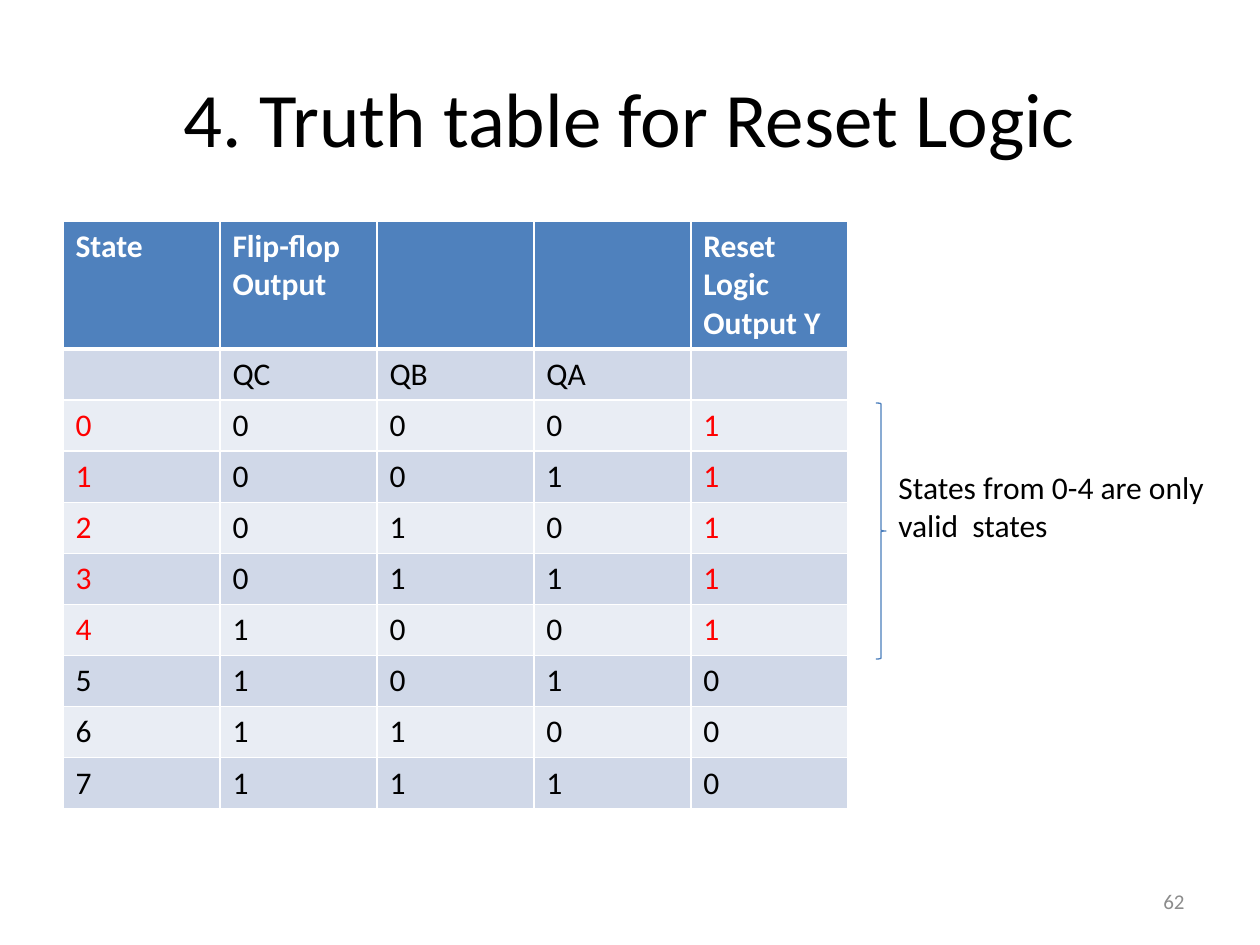
from dataclasses import dataclass

from lxml import etree
from pptx import Presentation
from pptx import util as u
from pptx.dml.color import RGBColor
from pptx.enum import shapes, text
from pptx.oxml import ns

SCALE = u.Inches(1) / 126  # EMU in one px


@dataclass(frozen=True)
class Theme:
    font: str = "Calibri"
    title_size: int = 44
    body_size: int = 18
    number_size: int = 12
    ink: str = "000000"
    white: str = "FFFFFF"
    valid: str = "FF0000"
    muted: str = "8C8C8C"
    header: str = "4F81BD"
    bands: tuple = ("D0D8E8", "E9EDF4")
    brace: str = "4B7EBC"


THEME = Theme()
LAST_VALID_STATE = 4
HEADINGS = ["State", "Flip-flop Output", "", "", "Reset Logic Output Y"]
OUTPUT_NAMES = ["", "QC", "QB", "QA", ""]


def px(length):
    return u.Emu(round(length * SCALE))


def write(frame, words, size=THEME.body_size, color=THEME.ink, bold=False,
          align=text.PP_ALIGN.LEFT, anchor=text.MSO_ANCHOR.TOP):
    """Put one formatted paragraph in a text frame."""
    frame.word_wrap = True
    frame.vertical_anchor = anchor
    paragraph = frame.paragraphs[0]
    paragraph.alignment = align
    run = paragraph.add_run()
    run.text = words
    run.font.name = THEME.font
    run.font.size = u.Pt(size)
    run.font.bold = bold
    run.font.color.rgb = RGBColor.from_string(color)


def set_borders(cell, **widths):
    """Draw white cell borders; widths are in points by side."""
    properties = cell._tc.get_or_add_tcPr()
    for side in ("L", "R", "T", "B"):
        line = etree.SubElement(properties, ns.qn(f"a:ln{side}"),
                                w=str(u.Pt(widths.get(side, 1))))
        fill = etree.SubElement(line, ns.qn("a:solidFill"))
        etree.SubElement(fill, ns.qn("a:srgbClr"), val=THEME.white)


def add_title(slide, left, top, width, height):
    title = slide.shapes.title
    title.left, title.top = px(left), px(top)
    title.width, title.height = px(width), px(height)
    write(title.text_frame, "4. Truth table for Reset Logic", size=THEME.title_size,
          align=text.PP_ALIGN.CENTER, anchor=text.MSO_ANCHOR.MIDDLE)


def state_row(state):
    """State, its three bits, and the reset output."""
    return [str(state), *f"{state:03b}", str(int(state <= LAST_VALID_STATE))]


def add_truth_table(slide, left, top, width, height, row_height):
    rows = [HEADINGS, OUTPUT_NAMES] + [state_row(state) for state in range(8)]
    columns = len(HEADINGS)
    table = slide.shapes.add_table(len(rows), columns, px(left), px(top),
                                   px(width), px(height)).table
    for column in table.columns:
        column.width = px(width // columns)
    for row in table.rows:
        row.height = px(row_height)
    table.rows[0].height = px(height - row_height * (len(rows) - 1))

    for i, values in enumerate(rows):
        is_header = i == 0
        is_valid = 2 <= i <= LAST_VALID_STATE + 2
        for j, value in enumerate(values):
            cell = table.cell(i, j)
            set_borders(cell, T=3 if i == 1 else 1, B=3 if is_header else 1)
            cell.fill.solid()
            cell.fill.fore_color.rgb = RGBColor.from_string(
                THEME.header if is_header else THEME.bands[(i - 1) % 2])
            if not value:
                continue
            color = THEME.ink
            if is_header:
                color = THEME.white
            elif is_valid and j in (0, columns - 1):
                color = THEME.valid
            write(cell.text_frame, value, color=color, bold=is_header)


def add_text_box(slide, left, top, width, height, words, **style):
    box = slide.shapes.add_textbox(px(left), px(top), px(width), px(height))
    write(box.text_frame, words, **style)


def add_valid_states_note(slide, left, top, width, height):
    # Brace along the rows of the valid states
    brace_width = 10
    brace = slide.shapes.add_shape(shapes.MSO_SHAPE.RIGHT_BRACE, px(left), px(top),
                                   px(brace_width), px(height))
    brace.shadow.inherit = False
    brace.fill.background()
    brace.line.color.rgb = RGBColor.from_string(THEME.brace)
    brace.line.width = u.Pt(0.75)
    # Label beside the brace
    add_text_box(slide, left + brace_width, top + 59, width - brace_width, 89,
                 "States from 0-4 are only valid  states")


def main():
    presentation = Presentation()
    presentation.slide_width, presentation.slide_height = px(1260), px(945)
    slide = presentation.slides.add_slide(presentation.slide_layouts[5])
    add_title(slide, 63, 38, 1134, 158)
    add_truth_table(slide, 63, 221, 785, 586, row_height=51)
    add_valid_states_note(slide, 876, 403, 354, 256)
    # Slide number
    add_text_box(slide, 903, 876, 294, 50, "62", size=THEME.number_size,
                 color=THEME.muted, align=text.PP_ALIGN.RIGHT,
                 anchor=text.MSO_ANCHOR.MIDDLE)
    presentation.save("out.pptx")


if __name__ == "__main__":
    main()
